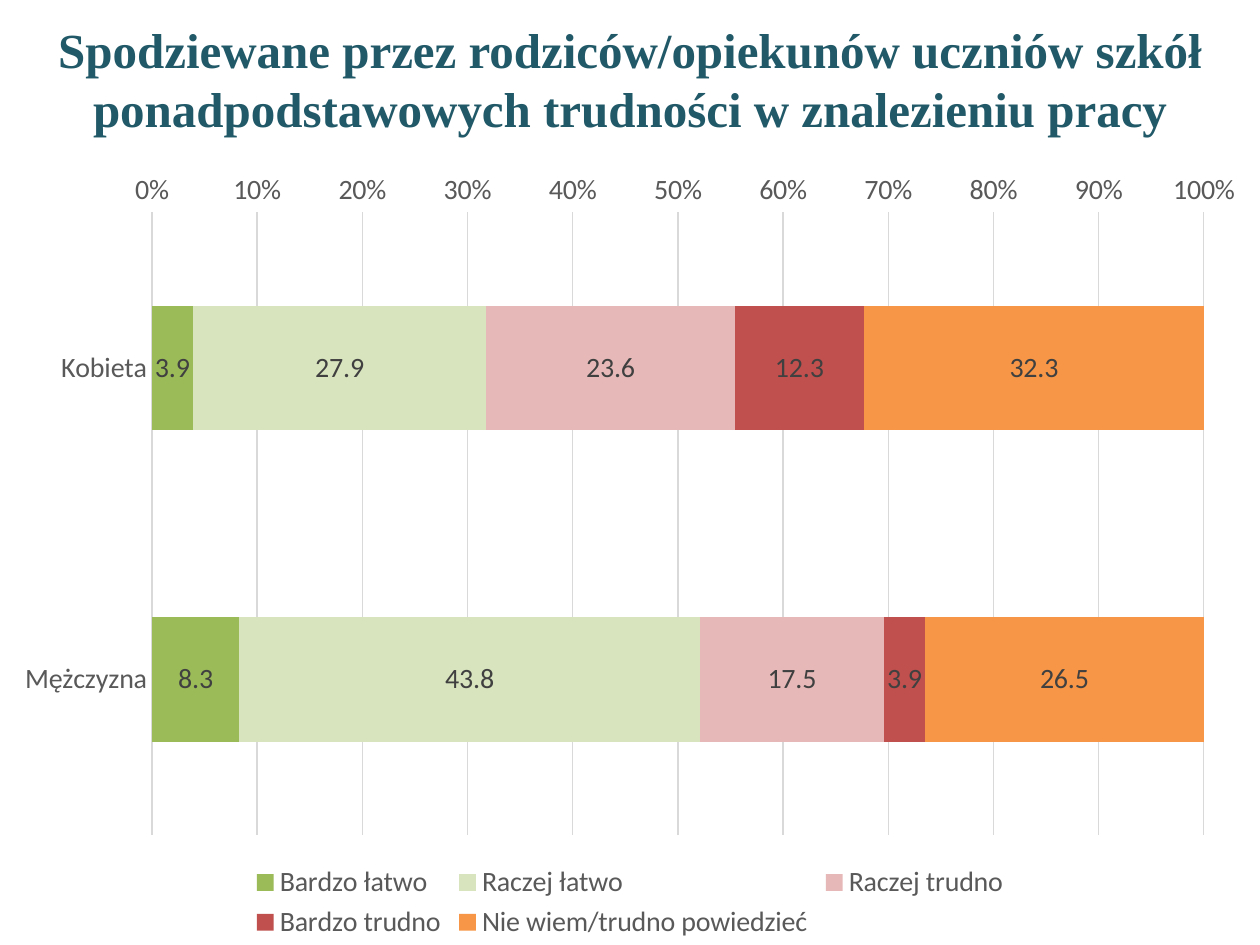
from pptx import Presentation
from pptx.chart.data import CategoryChartData
from pptx.dml.color import RGBColor
from pptx.enum.chart import XL_CHART_TYPE, XL_LABEL_POSITION, XL_LEGEND_POSITION, XL_TICK_MARK
from pptx.enum.text import MSO_ANCHOR, PP_ALIGN
from pptx.util import Pt

COLORS = {
    "title": "215968",
    "axis_text": "595959",
    "label_text": "404040",
    "grid": "D9D9D9",
    "very_easy": "9BBB59",
    "rather_easy": "D7E4BD",
    "rather_hard": "E6B9B8",
    "very_hard": "C0504D",
    "unsure": "F79646",
}
TITLE = ("Spodziewane przez rodziców/opiekunów uczniów szkół "
         "ponadpodstawowych trudności w znalezieniu pracy")
GENDERS = ["Kobieta", "Mężczyzna"]
ANSWERS = [
    ("Bardzo łatwo", (3.9, 8.3), "very_easy"),
    ("Raczej łatwo", (27.9, 43.8), "rather_easy"),
    ("Raczej trudno", (23.6, 17.5), "rather_hard"),
    ("Bardzo trudno", (12.3, 3.9), "very_hard"),
    ("Nie wiem/trudno powiedzieć", (32.3, 26.5), "unsure"),
]
WIDTH, HEIGHT, TITLE_HEIGHT = 720, 540, 90


def rgb(name):
    return RGBColor.from_string(COLORS[name])


def style_font(font, size, color, family="Calibri", bold=False):
    font.size = Pt(size)
    font.name = family
    font.bold = bold
    font.color.rgb = rgb(color)


def style_line(line):
    line.color.rgb = rgb("grid")
    line.width = Pt(0.75)


def add_title(slide, left, top, width, height):
    heading = slide.shapes.add_textbox(Pt(left), Pt(top), Pt(width), Pt(height))
    frame = heading.text_frame
    frame.word_wrap = True
    frame.vertical_anchor = MSO_ANCHOR.MIDDLE
    frame.text = TITLE
    paragraph = frame.paragraphs[0]
    paragraph.alignment = PP_ALIGN.CENTER
    style_font(paragraph.runs[0].font, 28, "title", "Times New Roman", True)


def add_answer_chart(slide, left, top, width, height):
    answers = CategoryChartData(number_format="0.0")
    answers.categories = GENDERS
    for name, shares, _ in ANSWERS:
        answers.add_series(name, shares)
    chart = slide.shapes.add_chart(
        XL_CHART_TYPE.BAR_STACKED_100, Pt(left), Pt(top), Pt(width), Pt(height), answers
    ).chart
    chart.has_title = False
    style_font(chart.font, 16, "axis_text")

    chart.has_legend = True
    chart.legend.position = XL_LEGEND_POSITION.BOTTOM
    chart.legend.include_in_layout = False
    style_font(chart.legend.font, 16, "axis_text")

    for axis in (chart.category_axis, chart.value_axis):
        axis.major_tick_mark = axis.minor_tick_mark = XL_TICK_MARK.NONE
        style_font(axis.tick_labels.font, 16, "axis_text")
    chart.category_axis.reverse_order = True
    style_line(chart.category_axis.format.line)

    share_axis = chart.value_axis
    share_axis.minimum_scale, share_axis.maximum_scale = 0, 1
    share_axis.major_unit = 0.1
    share_axis.tick_labels.number_format = "0%"
    share_axis.tick_labels.number_format_is_linked = False
    share_axis.format.line.fill.background()
    share_axis.has_major_gridlines = True
    style_line(share_axis.major_gridlines.format.line)

    plot = chart.plots[0]
    plot.gap_width = 150
    plot.overlap = 100
    plot.vary_by_categories = False
    for series, (_, _, color) in zip(plot.series, ANSWERS):
        series.format.fill.solid()
        series.format.fill.fore_color.rgb = rgb(color)
        series.invert_if_negative = False
        labels = series.data_labels
        labels.show_value = True
        labels.position = XL_LABEL_POSITION.CENTER
        labels.number_format = "0.0"
        labels.number_format_is_linked = False
        style_font(labels.font, 16, "label_text")


def main():
    presentation = Presentation()
    presentation.slide_width, presentation.slide_height = Pt(WIDTH), Pt(HEIGHT)
    slide = presentation.slides.add_slide(presentation.slide_layouts[6])
    add_title(slide, 0, 0, WIDTH, TITLE_HEIGHT)
    add_answer_chart(slide, 0, TITLE_HEIGHT, WIDTH, HEIGHT - TITLE_HEIGHT)
    presentation.save("out.pptx")


if __name__ == "__main__":
    main()
